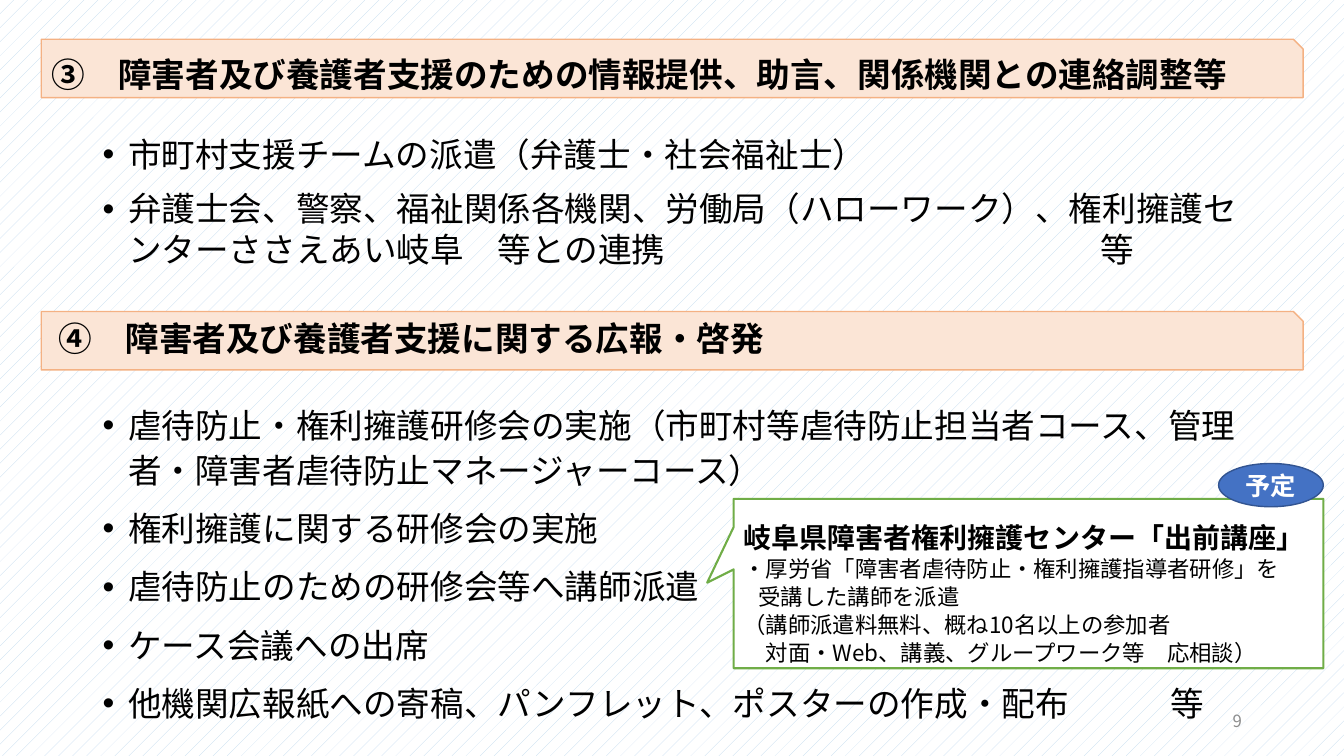
from lxml import etree
from pptx import Presentation
from pptx.dml.color import RGBColor
from pptx.enum.dml import MSO_PATTERN
from pptx.enum.shapes import MSO_SHAPE
from pptx.enum.text import MSO_ANCHOR, PP_ALIGN
from pptx.oxml.ns import qn
from pptx.util import Cm, Pt

SNIP, OVAL = MSO_SHAPE.SNIP_1_RECTANGLE, MSO_SHAPE.OVAL
CALLOUT = MSO_SHAPE.RECTANGULAR_CALLOUT
TOP, MIDDLE, BOTTOM = MSO_ANCHOR.TOP, MSO_ANCHOR.MIDDLE, MSO_ANCHOR.BOTTOM
LEFT, CENTER, RIGHT = PP_ALIGN.LEFT, PP_ALIGN.CENTER, PP_ALIGN.RIGHT
DOTS = MSO_PATTERN.PERCENT_5
FONT = "Noto Sans CJK JP"


def color(code):
    return RGBColor.from_string(code)


def write(para, text, size=24, ink="000000", bold=False, align=LEFT,
          lead=None, before=0, indent=0, bullet=False, tab=None):
    """Fill a paragraph; lengths are in cm, lead and before in points."""
    para.alignment = align
    para.space_before = Pt(before)
    if lead:
        para.line_spacing = Pt(lead)
    props = para._p.get_or_add_pPr()
    props.set("marL", str(Cm(indent)))
    props.set("indent", str(-Cm(indent) if bullet else 0))
    if bullet:
        etree.SubElement(props, qn("a:buFont"), typeface="Arial")
        etree.SubElement(props, qn("a:buChar"), char="•")
    if tab:
        stops = etree.SubElement(props, qn("a:tabLst"))
        etree.SubElement(stops, qn("a:tab"), pos=str(Cm(tab)), algn="l")
    run = para.add_run()
    run.text = text
    font = run.font
    font.name, font.size, font.bold = FONT, Pt(size), bold
    font.color.rgb = color(ink)
    etree.SubElement(run._r.get_or_add_rPr(), qn("a:ea"), typeface=FONT)


def frame(shape, anchor=TOP, left=0.25, top=0.13, bottom=0.13):
    """Set wrapping, anchor and insets, and return the text frame."""
    text = shape.text_frame
    text.word_wrap = True
    text.vertical_anchor = anchor
    text.margin_left, text.margin_top = Cm(left), Cm(top)
    text.margin_bottom = Cm(bottom)
    return text


def add_box(slide, box):
    return slide.shapes.add_textbox(*map(Cm, box))


def add_form(slide, kind, box, fill, line, width=1):
    form = slide.shapes.add_shape(kind, *map(Cm, box))
    form.shadow.inherit = False
    form.fill.solid()
    form.fill.fore_color.rgb = color(fill)
    form.line.color.rgb = color(line)
    form.line.width = Pt(width)
    return form


def add_heading(slide, box, text, left, top):
    add_form(slide, SNIP, box, "FBE5D6", "F4B183")
    label = frame(add_box(slide, box), left=left, top=top)
    write(label.paragraphs[0], text, bold=True, lead=28.8)


def add_list(slide, box, items):
    """Each item is its text, line height and tab stop."""
    body = frame(add_box(slide, box))
    for i, (text, lead, tab) in enumerate(items):
        para = body.add_paragraph() if i else body.paragraphs[0]
        write(para, text, lead=lead, before=10 if i else 0,
              indent=0.64, bullet=True, tab=tab)


def add_notice(slide, box, title, lines, tag):
    """Callout with a badge on its top right corner."""
    left, top, width, height = box
    form = add_form(slide, CALLOUT, box, "FFFFFF", "70AD47", 1.5)
    form.adjustments[0], form.adjustments[1] = -0.545, -0.005
    body = frame(form, BOTTOM, bottom=0.05)
    write(body.paragraphs[0], title, size=20, bold=True)
    for text, indent in lines:
        write(body.add_paragraph(), text, size=16, lead=20, indent=indent)
    wide, high = 2.64, 1.09
    spot = (left + width - wide, top - 0.89, wide, high)
    badge = frame(add_form(slide, OVAL, spot, "4472C4", "325491"), MIDDLE)
    badge.word_wrap = False
    write(badge.paragraphs[0], tag, size=18, ink="FFFFFF", bold=True,
          align=CENTER)


def add_number(slide, box, text):
    label = frame(add_box(slide, box), MIDDLE)
    write(label.paragraphs[0], text, size=12, ink="8C8C8C", align=RIGHT)


def main():
    deck = Presentation()
    deck.slide_width, deck.slide_height = Cm(33.87), Cm(19.05)
    slide = deck.slides.add_slide(deck.slide_layouts[6])
    back = slide.background.fill
    back.patterned()
    back.pattern = DOTS
    back.fore_color.rgb = color("BDD7EE")
    back.back_color.rgb = color("FFFFFF")

    add_heading(slide, (1.04, 0.99, 31.8, 1.47),
                "③　障害者及び養護者支援のための情報提供、助言、関係機関との連絡調整等",
                0.25, 0.37)
    add_list(slide, (2.34, 3.35, 29.21, 3.61), [
        ("市町村支援チームの派遣（弁護士・社会福祉士）", 25.9, None),
        ("弁護士会、警察、福祉関係各機関、労働局（ハローワーク）、"
         "権利擁護センターささえあい岐阜　等との連携\t等", 28.8, 25.15),
    ])
    add_heading(slide, (1.04, 7.85, 31.8, 1.47),
                "④　障害者及び養護者支援に関する広報・啓発", 0.43, 0.17)
    add_list(slide, (2.34, 9.98, 29.21, 8.43), [
        ("虐待防止・権利擁護研修会の実施（市町村等虐待防止担当者コース、"
         "管理者・障害者虐待防止マネージャーコース）", 31.7, None),
        ("権利擁護に関する研修会の実施", 31.7, None),
        ("虐待防止のための研修会等へ講師派遣", 31.7, None),
        ("ケース会議への出席", 31.7, None),
        ("他機関広報紙への寄稿、パンフレット、ポスターの作成・配布\t等",
         31.7, 26.9),
    ])
    add_notice(slide, (18.49, 12.57, 14.86, 4.27),
               "岐阜県障害者権利擁護センター「出前講座」", [
                   ("・厚労省「障害者虐待防止・権利擁護指導者研修」を", 0),
                   ("受講した講師を派遣", 0.38),
                   ("（講師派遣料無料、概ね10名以上の参加者", 0),
                   ("対面・Web、講義、グループワーク等　応相談）", 0.56),
               ], "予定")
    add_number(slide, (23.93, 17.65, 7.62, 1.02), "9")
    deck.save("out.pptx")


if __name__ == "__main__":
    main()
